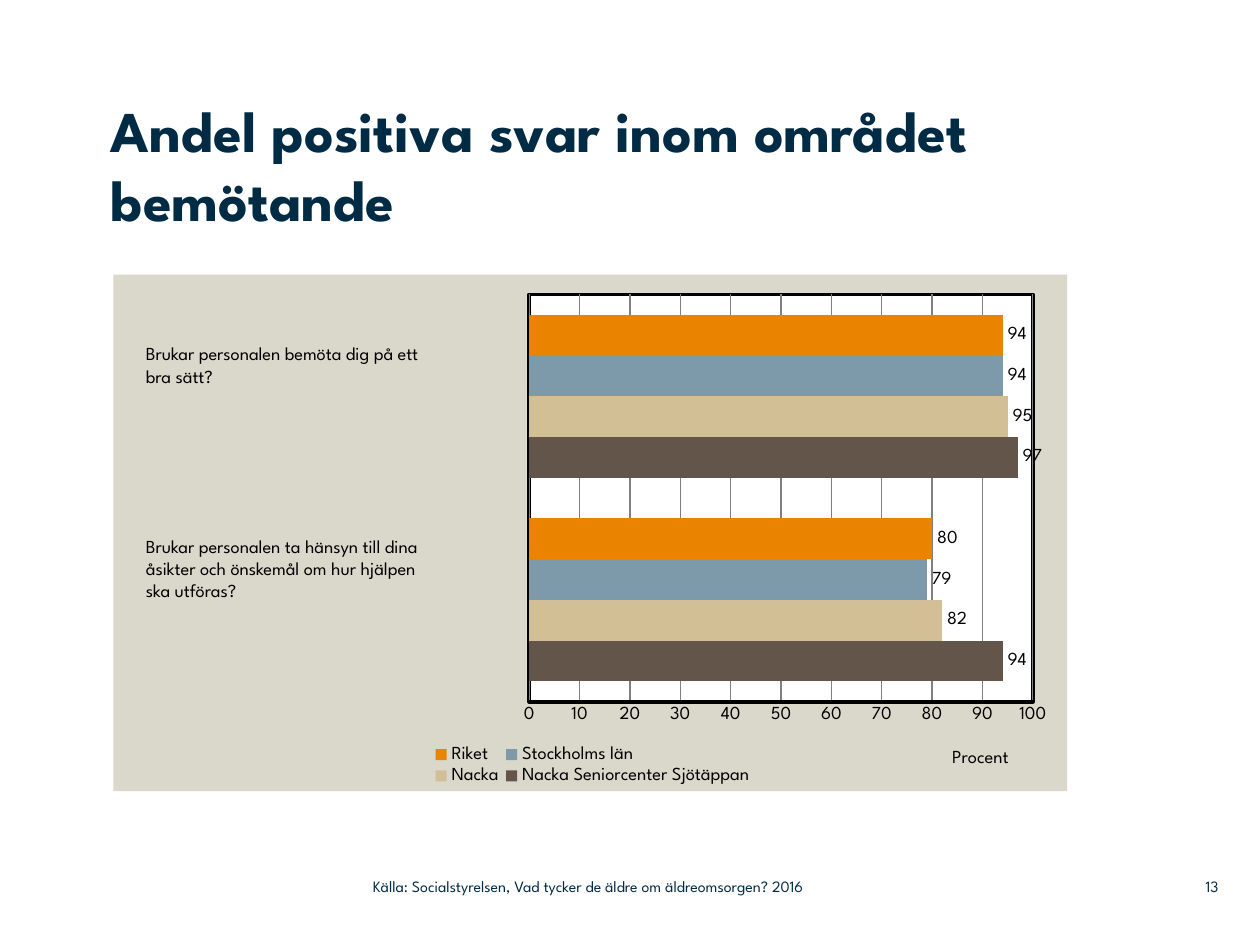
"""Build a slide with a bar chart of positive survey answers in elderly care."""
from dataclasses import dataclass

import lxml.etree
import pptx
import pptx.chart.data
import pptx.dml.color
import pptx.enum.chart
import pptx.enum.text
import pptx.oxml
import pptx.oxml.ns
import pptx.util

Inches = pptx.util.Inches
Pt = pptx.util.Pt
RGBColor = pptx.dml.color.RGBColor
Align = pptx.enum.text.PP_ALIGN
Anchor = pptx.enum.text.MSO_ANCHOR
qn = pptx.oxml.ns.qn

FONT = "League Spartan"
NAVY = RGBColor(0x00, 0x2B, 0x45)
BLACK = RGBColor(0x00, 0x00, 0x00)
WHITE = RGBColor(0xFF, 0xFF, 0xFF)
GREY = RGBColor(0x80, 0x80, 0x80)
SAND = RGBColor(0xDA, 0xD7, 0xCB)
BROWN = RGBColor(0x63, 0x55, 0x49)
BEIGE = RGBColor(0xD3, 0xBF, 0x96)
BLUE = RGBColor(0x7D, 0x9A, 0xAA)
ORANGE = RGBColor(0xE9, 0x83, 0x00)

TITLE_FORMAT = {"name": FONT, "size": Pt(33), "bold": True}
CHART_FORMAT = {"name": FONT, "size": Pt(10.5), "bold": False}
FOOTER_FORMAT = {"name": FONT, "size": Pt(9), "bold": False}
NO_MARGINS = dict.fromkeys(
    ("margin_left", "margin_top", "margin_right", "margin_bottom"), 0)
FOOTER_FRAME = {**NO_MARGINS, "vertical_anchor": Anchor.MIDDLE}


@dataclass
class Series:
    name: str
    values: tuple[int, ...]
    color: RGBColor


@dataclass
class Label:
    box: tuple[float, float, float, float]
    lines: tuple[str, ...]
    font: dict
    color: RGBColor
    frame: dict
    align: Align = Align.LEFT


SERIES = (
    Series("Nacka Seniorcenter Sjötäppan", (94, 97), BROWN),
    Series("Nacka", (82, 95), BEIGE),
    Series("Stockholms län", (79, 94), BLUE),
    Series("Riket", (80, 94), ORANGE),
)
LABELS = (
    Label((1.06, 2.67, 2.97, 0.45),
          ("Brukar personalen bemöta dig på ett", "bra sätt?"),
          CHART_FORMAT, BLACK, {}),
    Label((1.06, 4.2, 2.99, 0.63),
          ("Brukar personalen ta hänsyn till dina",
           "åsikter och önskemål om hur hjälpen", "ska utföras?"),
          CHART_FORMAT, BLACK, {}),
    Label((9.2, 6.89, 0.47, 0.29), ("13",),
          FOOTER_FORMAT, NAVY, FOOTER_FRAME, Align.RIGHT),
    Label((2.96, 6.89, 4.43, 0.29),
          ("Källa: Socialstyrelsen, Vad tycker de äldre om äldreomsorgen? 2016",),
          FOOTER_FORMAT, NAVY, FOOTER_FRAME),
)


def apply(target, values: dict) -> None:
    for name, value in values.items():
        setattr(target, name, value)


def set_font(font, values: dict, color: RGBColor) -> None:
    apply(font, values)
    font.color.rgb = color


def set_layout(parent, index: int, inner: bool = False, **fractions: float) -> None:
    layout = parent.find(qn("c:layout"))
    if layout is None:
        layout = pptx.oxml.parse_xml(
            f'<c:layout {pptx.oxml.ns.nsdecls("c")}/>')
        parent.insert(index, layout)
    manual = lxml.etree.SubElement(layout, qn("c:manualLayout"))
    values = {"layoutTarget": "inner"} if inner else {}
    values |= {"xMode": "edge", "yMode": "edge", **fractions}
    for name, value in values.items():
        lxml.etree.SubElement(manual, qn(f"c:{name}")).set("val", str(value))


def area_format(fill: RGBColor, line: str):
    return pptx.oxml.parse_xml(
        f'<c:spPr {pptx.oxml.ns.nsdecls("c", "a")}><a:solidFill>'
        f'<a:srgbClr val="{fill}"/></a:solidFill>{line}</c:spPr>')


def add_title(s, text: str) -> None:
    sp = s.shapes.title
    apply(sp, {"left": Inches(0.88), "top": Inches(0.75),
               "width": Inches(7.6), "height": Inches(1.42)})
    tf = sp.text_frame
    apply(tf, {**NO_MARGINS, "word_wrap": True, "vertical_anchor": Anchor.TOP,
               "auto_size": pptx.enum.text.MSO_AUTO_SIZE.NONE})
    p = tf.paragraphs[0]
    p.alignment = Align.LEFT
    r = p.add_run()
    r.text = text
    set_font(r.font, TITLE_FORMAT, NAVY)


def add_label(s, label: Label) -> None:
    tf = s.shapes.add_textbox(*map(Inches, label.box)).text_frame
    apply(tf, {"word_wrap": True, **label.frame})
    for i, line in enumerate(label.lines):
        p = tf.add_paragraph() if i else tf.paragraphs[0]
        p.alignment = label.align
        r = p.add_run()
        r.text = line
        set_font(r.font, label.font, label.color)


def add_bar_chart(s, series: tuple[Series, ...]) -> None:
    data = pptx.chart.data.CategoryChartData()
    data.categories = ["1", "2"]
    for item in series:
        data.add_series(item.name, item.values)
    chart = s.shapes.add_chart(
        pptx.enum.chart.XL_CHART_TYPE.BAR_CLUSTERED,
        *map(Inches, (0.9, 2.18, 7.57, 4.1)), data).chart
    apply(chart, {"has_title": False, "has_legend": True})
    set_font(chart.font, CHART_FORMAT, BLACK)

    plot = chart.plots[0]
    apply(plot, {"gap_width": 100, "overlap": 0,
                 "vary_by_categories": False, "has_data_labels": True})
    apply(plot.data_labels, {
        "show_value": True,
        "position": pptx.enum.chart.XL_LABEL_POSITION.OUTSIDE_END})
    set_font(plot.data_labels.font, CHART_FORMAT, BLACK)
    for bars, item in zip(plot.series, series):
        bars.format.fill.solid()
        bars.format.fill.fore_color.rgb = item.color

    chart.category_axis.visible = False
    axis = chart.value_axis
    apply(axis, {"minimum_scale": 0, "maximum_scale": 100, "major_unit": 10,
                 "has_major_gridlines": True,
                 "major_tick_mark": pptx.enum.chart.XL_TICK_MARK.NONE})
    for line, color, width in ((axis.format.line, BLACK, 2),
                               (axis.major_gridlines.format.line, GREY, 0.75)):
        line.color.rgb = color
        line.width = Pt(width)
    set_font(axis.tick_labels.font, CHART_FORMAT, BLACK)
    p = axis.axis_title.text_frame.paragraphs[0]
    r = p.add_run()
    r.text = "Procent"
    set_font(r.font, CHART_FORMAT, BLACK)

    legend = chart.legend
    apply(legend, {"position": pptx.enum.chart.XL_LEGEND_POSITION.BOTTOM,
                   "include_in_layout": False})
    set_font(legend.font, CHART_FORMAT, BLACK)

    space = chart.element
    area = space.find(".//" + qn("c:plotArea"))
    set_layout(area, 0, inner=True, x=0.436, y=0.038, w=0.528, h=0.789)
    set_layout(area.find(".//" + qn("c:title")), 1, x=0.876, y=0.91)
    set_layout(space.find(".//" + qn("c:legend")), 1,
               x=0.33, y=0.905, w=0.345, h=0.09)
    frame = (f'<a:ln w="{Pt(2)}"><a:solidFill><a:srgbClr val="{BLACK}"/>'
             '</a:solidFill></a:ln>')
    area.append(area_format(WHITE, frame))
    space.find(qn("c:chart")).addnext(
        area_format(SAND, "<a:ln><a:noFill/></a:ln>"))


def main() -> None:
    prs = pptx.Presentation()
    apply(prs, {"slide_width": Inches(10), "slide_height": Inches(7.5)})
    s = prs.slides.add_slide(prs.slide_layouts[5])
    add_bar_chart(s, SERIES)
    add_title(s, "Andel positiva svar inom området bemötande")
    for label in LABELS:
        add_label(s, label)
    prs.save("out.pptx")


if __name__ == "__main__":
    main()
